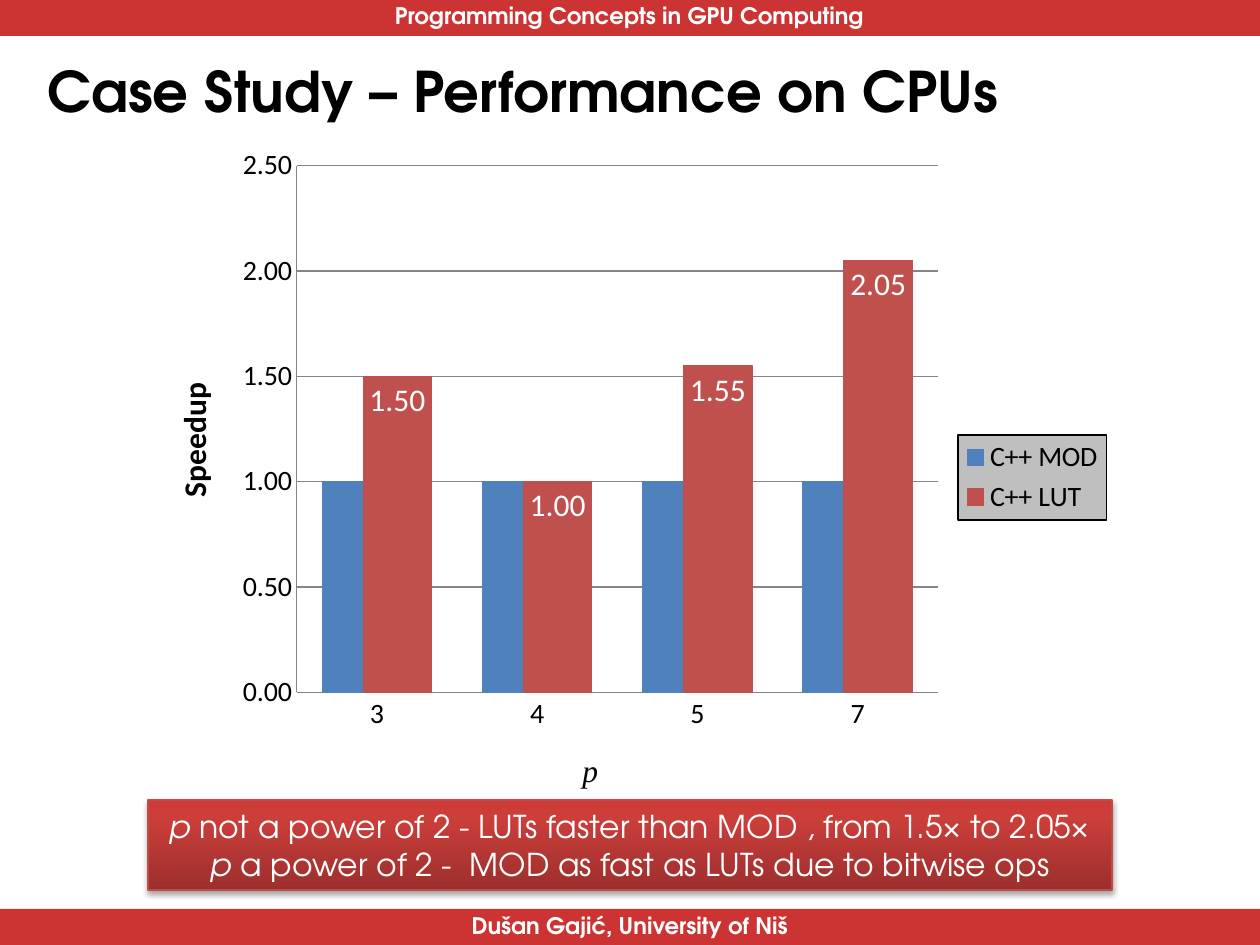
from typing import NamedTuple

from pptx import Presentation
from pptx.chart.data import CategoryChartData
from pptx.dml.color import RGBColor
from pptx.enum.chart import (XL_CHART_TYPE as Kind, XL_LABEL_POSITION as Spot,
                             XL_LEGEND_POSITION as Side, XL_TICK_MARK as Tick)
from pptx.enum.shapes import MSO_SHAPE as Form
from pptx.enum.text import MSO_ANCHOR as Anchor, PP_ALIGN as Align
from pptx.oxml import parse_xml
from pptx.oxml.ns import nsdecls
from pptx.util import Emu, Pt

HEAD, BODY, MATH = "TeX Gyre Adventor", "Calibri", "Times New Roman"
BLACK, WHITE = RGBColor(0, 0, 0), RGBColor(255, 255, 255)
RED, EDGE = RGBColor(0xC0, 0, 0), RGBColor(0xBF, 0x4C, 0x48)
BLUE, BRICK = RGBColor(0x4F, 0x81, 0xBD), RGBColor(0xC0, 0x50, 0x4D)
GRID = RGBColor(0x86, 0x86, 0x86)
RAMP = [(0, "9C2F2D"), (80, "CB3E3A"), (100, "CE3B37")]


class Box(NamedTuple):
    x: int
    y: int
    w: int
    h: int


class Band(NamedTuple):
    bar: Box
    label: Box
    text: str


class Series(NamedTuple):
    name: str
    vals: tuple
    color: RGBColor


BANDS = [
    Band(Box(0, 909, 1260, 36), Box(457, 906, 345, 40), "Dušan Gajić, University of Niš"),
    Band(Box(0, 0, 1260, 36), Box(379, -4, 500, 40), "Programming Concepts in GPU Computing"),
]
CATS = ("3", "4", "5", "7")
DATA = [
    Series("C++ MOD", (1, 1, 1, 1), BLUE),
    Series("C++ LUT", (1.5, 1, 1.55, 2.05), BRICK),
]
NOTES = [
    " not a power of 2 - LUTs faster than MOD , from 1.5× to 2.05×",
    " a power of 2 -  MOD as fast as LUTs due to bitwise ops",
]


def px(n: int) -> Emu:
    return Emu(round(n * 914400 / 126))


def place(box: Box) -> list:
    return [px(n) for n in box]


def style(font, size: int, color: RGBColor = BLACK, name: str = BODY,
          bold: bool = False, ital: bool = False) -> None:
    font.size, font.name, font.bold, font.italic = Pt(size), name, bold, ital
    font.color.rgb = color


def write(para, text: str, align=Align.LEFT, **form) -> None:
    para.alignment = align
    run = para.add_run()
    run.text = text
    style(run.font, **form)


def draw_band(slide, band: Band) -> None:
    bar = slide.shapes.add_shape(Form.RECTANGLE, *place(band.bar))
    bar.shadow.inherit = False
    bar.fill.solid()
    bar.fill.fore_color.rgb = RED
    bar.line.fill.background()
    # Let the white page show through a little
    tone = bar.fill._xPr.find(".//{*}srgbClr")
    tone.append(parse_xml(f'<a:alpha {nsdecls("a")} val="80000"/>'))
    frame = slide.shapes.add_textbox(*place(band.label)).text_frame
    frame.word_wrap = False
    write(frame.paragraphs[0], band.text, Align.CENTER,
          size=13, color=WHITE, name=HEAD, bold=True)


def draw_title(slide, box: Box, text: str) -> None:
    title = slide.shapes.title
    title.left, title.top, title.width, title.height = place(box)
    frame = title.text_frame
    frame.word_wrap, frame.vertical_anchor = False, Anchor.MIDDLE
    write(frame.paragraphs[0], text, size=32, name=HEAD, bold=True)


def set_axis(axis, text: str, **form) -> None:
    axis.major_tick_mark = axis.minor_tick_mark = Tick.NONE
    axis.format.line.color.rgb = GRID
    style(axis.tick_labels.font, 16)
    write(axis.axis_title.text_frame.paragraphs[0], text, Align.CENTER, size=18, **form)


def draw_chart(slide, box: Box, plot_box: Box) -> None:
    data = CategoryChartData(number_format="0.00")
    data.categories = CATS
    for item in DATA:
        data.add_series(item.name, item.vals)
    chart = slide.shapes.add_chart(Kind.COLUMN_CLUSTERED, *place(box), data).chart
    style(chart.font, 10)
    chart.has_title = False

    # Axes
    set_axis(chart.category_axis, "p", name=MATH, ital=True)
    axis = chart.value_axis
    set_axis(axis, "Speedup", bold=True)
    axis.minimum_scale, axis.maximum_scale, axis.major_unit = 0, 2.5, 0.5
    axis.tick_labels.number_format = "0.00"
    axis.tick_labels.number_format_is_linked = False
    axis.major_gridlines.format.line.color.rgb = GRID

    # Columns
    plot = chart.plots[0]
    plot.gap_width, plot.overlap, plot.vary_by_categories = 75, 40, False
    for item, cols in zip(DATA, plot.series):
        cols.format.fill.solid()
        cols.format.fill.fore_color.rgb = item.color
        cols.format.line.color.rgb = item.color
        cols.format.line.width = Pt(0.75)
    tags = plot.series[1].data_labels
    tags.show_value, tags.position = True, Spot.INSIDE_END
    tags.number_format, tags.number_format_is_linked = "0.00", False
    style(tags.font, 18, WHITE)

    # Legend on a grey panel
    chart.has_legend = True
    legend = chart.legend
    legend.position, legend.include_in_layout = Side.RIGHT, False
    style(legend.font, 16)
    legend._element.find("{*}overlay").addnext(parse_xml(
        f'<c:spPr {nsdecls("c", "a")}>'
        '<a:solidFill><a:srgbClr val="BFBFBF"/></a:solidFill>'
        '<a:ln w="9525"><a:solidFill><a:srgbClr val="000000"/></a:solidFill></a:ln></c:spPr>'))

    # Inner plot area as shares of the chart frame
    area = chart._chartSpace.find(".//{*}plotArea")
    for old in area.findall("{*}layout"):
        area.remove(old)
    shares = {"x": (plot_box.x - box.x) / box.w, "y": (plot_box.y - box.y) / box.h,
              "w": plot_box.w / box.w, "h": plot_box.h / box.h}
    modes = '<c:xMode val="edge"/><c:yMode val="edge"/>'
    sizes = "".join(f'<c:{key} val="{val:.3f}"/>' for key, val in shares.items())
    area.insert(0, parse_xml(
        f'<c:layout {nsdecls("c")}><c:manualLayout><c:layoutTarget val="inner"/>'
        f'{modes}{sizes}</c:manualLayout></c:layout>'))


def draw_note(slide, box: Box) -> None:
    note = slide.shapes.add_shape(Form.RECTANGLE, *place(box))
    note.line.color.rgb, note.line.width = EDGE, Pt(0.75)
    note.shadow.inherit = False
    props = note._element.spPr
    stops = "".join(f'<a:gs pos="{pos}000"><a:srgbClr val="{tone}"/></a:gs>'
                    for pos, tone in RAMP)
    props.find("{*}prstGeom").addnext(parse_xml(
        f'<a:gradFill {nsdecls("a")} rotWithShape="1"><a:gsLst>{stops}</a:gsLst>'
        '<a:lin ang="16200000" scaled="0"/></a:gradFill>'))
    props.find("{*}effectLst").append(parse_xml(
        f'<a:outerShdw {nsdecls("a")} blurRad="40000" dist="23000" dir="5400000" '
        'rotWithShape="0"><a:srgbClr val="000000"><a:alpha val="35000"/>'
        '</a:srgbClr></a:outerShdw>'))
    frame = note.text_frame
    frame.word_wrap, frame.vertical_anchor = False, Anchor.MIDDLE
    form = dict(align=Align.CENTER, size=18, color=WHITE, name=HEAD)
    for i, text in enumerate(NOTES):
        para = frame.add_paragraph() if i else frame.paragraphs[0]
        write(para, "p", ital=True, **form)
        write(para, text, **form)


def main() -> None:
    deck = Presentation()
    deck.slide_width, deck.slide_height = px(1260), px(945)
    slide = deck.slides.add_slide(deck.slide_layouts[5])
    for band in BANDS:
        draw_band(slide, band)
    draw_title(slide, Box(35, 50, 993, 81), "Case Study – Performance on CPUs")
    draw_chart(slide, Box(144, 135, 973, 685), Box(297, 166, 641, 527))
    draw_note(slide, Box(148, 800, 964, 90))
    deck.save("out.pptx")


if __name__ == "__main__":
    main()
